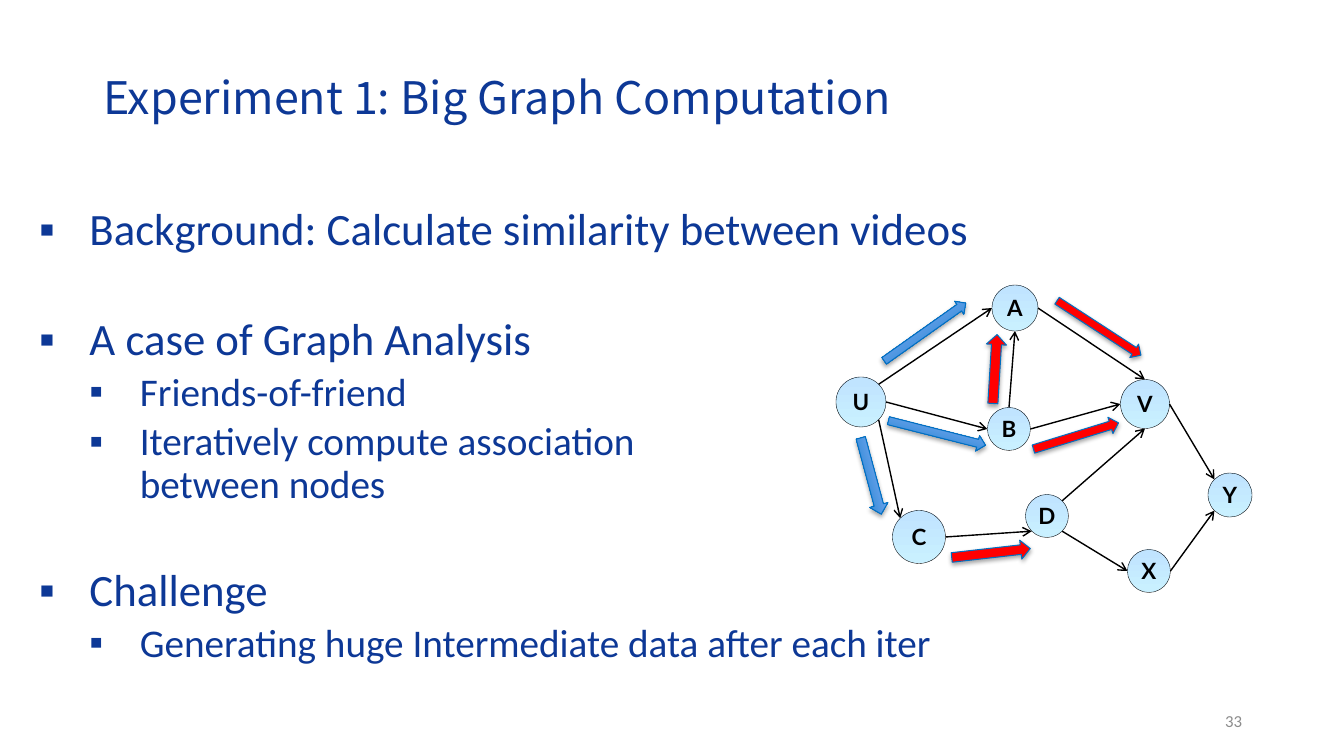
import math
import pptx
import pptx.dml.color
import pptx.enum.shapes
import pptx.enum.text
import pptx.oxml
import pptx.oxml.ns
import pptx.util

THEME = {
    "ink": "0D3896", "black": "000000", "muted": "8C8C8C",
    "node": ((0.05, "C9F0FF"), (0.95, "C0E4FF")),
    "blue": ((0, "0071C5"), (1, "A2BEFF")), "red": "FF0000", "outline": "006FC1",
    "title_font": "Noto Sans CJK SC", "body_font": "Calibri", "node_font": "Lato",
    "title_size": 32, "level_sizes": (32, 28), "node_size": 16, "number_size": 12,
}
SHAPE = pptx.enum.shapes.MSO_SHAPE
ALIGN = pptx.enum.text.PP_ALIGN
MIDDLE = pptx.enum.text.MSO_ANCHOR.MIDDLE
NO_FIT = pptx.enum.text.MSO_AUTO_SIZE.NONE

# Text, level, space before in points
BULLETS = (
    ("Background: Calculate similarity between videos", 0, 5),
    ("A case of Graph Analysis", 0, 44),
    ("Friends-of-friend", 1, 5),
    ("Iteratively compute association\nbetween nodes", 1, 5),
    ("Challenge", 0, 44),
    ("Generating huge Intermediate data after each iter", 1, 5),
)
# Centre and diameter, inside the graph box
NODES = {
    "A": (180, 23, 46), "U": (26, 117, 50), "B": (174, 144, 43), "V": (310, 119, 49),
    "C": (84, 252, 53), "D": (212, 231, 43), "X": (314, 286, 43), "Y": (395, 210, 44),
}
# Start node and side, end node and side
EDGES = ("U E B W", "U SE C NW", "B E V W", "C E D SW", "D NE V S", "D SE X W",
         "V E Y NW", "X E Y SW", "U NE A W", "B N A S", "A E V N")
COMPASS = ("E", "SE", "S", "SW", "W", "NW", "N", "NE")
# Centre, length, thickness, rotation, fill
FLOWS = (
    (90, 47, 100, 16, 324.7, "blue"), (264, 43, 100, 16, 33, "red"),
    (102, 148, 100, 16, 14.2, "blue"), (241, 151, 89, 17, 342.9, "red"),
    (36, 191, 79, 19, 74.9, "blue"), (156, 268, 79, 19, 353.5, "red"),
    (160, 84, 69, 20, 273.5, "red"),
)


def px(length):
    return pptx.util.Emu(round(length * 914400 / 100.8))


def rgb(code):
    return pptx.dml.color.RGBColor.from_string(code)


def assign(target, values):
    for name, value in values.items():
        setattr(target, name, value)


def place(shape, box):
    assign(shape, dict(zip(("left", "top", "width", "height"), map(px, box))))


def add_xml(parent, tag, **attributes):
    child = pptx.oxml.ns.qn("a:" + tag)
    element = parent.makeelement(child, attributes)
    parent.append(element)
    return element


def write(para, text, font, size, color, bold=False):
    for number, line in enumerate(text.split("\n")):
        if number:
            para.add_line_break()
        span = para.add_run()
        span.text = line
        assign(span.font, {"name": font, "size": pptx.util.Pt(size), "bold": bold})
        span.font.color.rgb = rgb(color)


def paint(shape, fill, line, width):
    shape.shadow.inherit = False
    if isinstance(fill, str):
        shape.fill.solid()
        shape.fill.fore_color.rgb = rgb(fill)
    else:
        shape.fill.gradient()
        shape.fill.gradient_angle = 90
        for stop, (position, color) in zip(shape.fill.gradient_stops, fill):
            stop.position = position
            stop.color.rgb = rgb(color)
    shape.line.color.rgb = rgb(line)
    shape.line.width = pptx.util.Pt(width)


def add_title(page, box):
    title = page.shapes.title
    place(title, box)
    assign(title.text_frame, {"vertical_anchor": MIDDLE, "word_wrap": True, "auto_size": NO_FIT})
    para = title.text_frame.paragraphs[0]
    assign(para, {"alignment": ALIGN.LEFT, "line_spacing": 0.9})
    write(para, "Experiment 1: Big Graph Computation",
          THEME["title_font"], THEME["title_size"], THEME["ink"])


def add_bullets(page, box):
    body = page.placeholders[1]
    place(body, box)
    frame = body.text_frame
    assign(frame, {"word_wrap": True, "auto_size": NO_FIT})
    for number, (text, level, gap) in enumerate(BULLETS):
        para = frame.add_paragraph() if number else frame.paragraphs[0]
        assign(para, {"level": level, "line_spacing": 0.9, "space_before": pptx.util.Pt(gap)})
        write(para, text, THEME["body_font"], THEME["level_sizes"][level], THEME["ink"])
        # Hanging square bullet
        properties = para._p.get_or_add_pPr()
        properties.set("marL", str(pptx.util.Inches(0.5 * (level + 1))))
        properties.set("indent", str(pptx.util.Inches(-0.5)))
        add_xml(properties, "buChar", char="▪")


def rim(node, side):
    x, y, diameter = NODES[node]
    angle = math.radians(45 * COMPASS.index(side))
    return x + diameter / 2 * math.cos(angle), y + diameter / 2 * math.sin(angle)


def add_node(page, name, left, top):
    x, y, diameter = NODES[name]
    node = page.shapes.add_shape(SHAPE.OVAL, 0, 0, 0, 0)
    place(node, (left + x - diameter / 2, top + y - diameter / 2, diameter, diameter))
    paint(node, THEME["node"], THEME["black"], 0.25)
    assign(node.text_frame, {"vertical_anchor": MIDDLE, "word_wrap": False})
    para = node.text_frame.paragraphs[0]
    para.alignment = ALIGN.CENTER
    write(para, name, THEME["node_font"], THEME["node_size"], THEME["black"], True)


def add_edge(page, edge, left, top):
    start, start_side, end, end_side = edge.split()
    points = rim(start, start_side) + rim(end, end_side)
    ends = [px(value + shift) for value, shift in zip(points, (left, top) * 2)]
    line = page.shapes.add_connector(pptx.enum.shapes.MSO_CONNECTOR.STRAIGHT, *ends)
    line.line.color.rgb = rgb(THEME["black"])
    line.line.width = pptx.util.Pt(1)
    add_xml(line.line._get_or_add_ln(), "tailEnd", type="arrow")
    add_xml(line._element.spPr, "effectLst")


def add_flow(page, flow, left, top):
    x, y, length, thickness, rotation, fill = flow
    arrow = page.shapes.add_shape(SHAPE.RIGHT_ARROW, 0, 0, 0, 0)
    place(arrow, (left + x - length / 2, top + y - thickness / 2, length, thickness))
    arrow.rotation = rotation
    paint(arrow, THEME[fill], THEME["outline"], 0.75)
    # Soft shadow below the arrow
    effects = arrow._element.spPr.find(pptx.oxml.ns.qn("a:effectLst"))
    shadow = add_xml(effects, "outerShdw", blurRad="40000", dist="23000",
                     dir="5400000", rotWithShape="0")
    color = add_xml(shadow, "srgbClr", val=THEME["black"])
    add_xml(color, "alpha", val="35000")


def add_graph(page, left, top):
    for name in NODES:
        add_node(page, name, left, top)
    for edge in EDGES:
        add_edge(page, edge, left, top)
    for flow in FLOWS:
        add_flow(page, flow, left, top)


def add_page_number(page, box):
    number = page.shapes.add_textbox(0, 0, 0, 0)
    place(number, box)
    assign(number.text_frame, {"word_wrap": True, "vertical_anchor": MIDDLE})
    para = number.text_frame.paragraphs[0]
    para.alignment = ALIGN.RIGHT
    write(para, "33", THEME["body_font"], THEME["number_size"], THEME["muted"])


def main():
    deck = pptx.Presentation()
    assign(deck, {"slide_width": px(1344), "slide_height": px(756)})
    page = deck.slides.add_slide(deck.slide_layouts[1])
    add_graph(page, 835, 285)
    add_title(page, (93, 40, 1159, 119))
    add_bullets(page, (29, 202, 1159, 480))
    add_page_number(page, (950, 701, 302, 40))
    deck.save("out.pptx")


if __name__ == "__main__":
    main()
